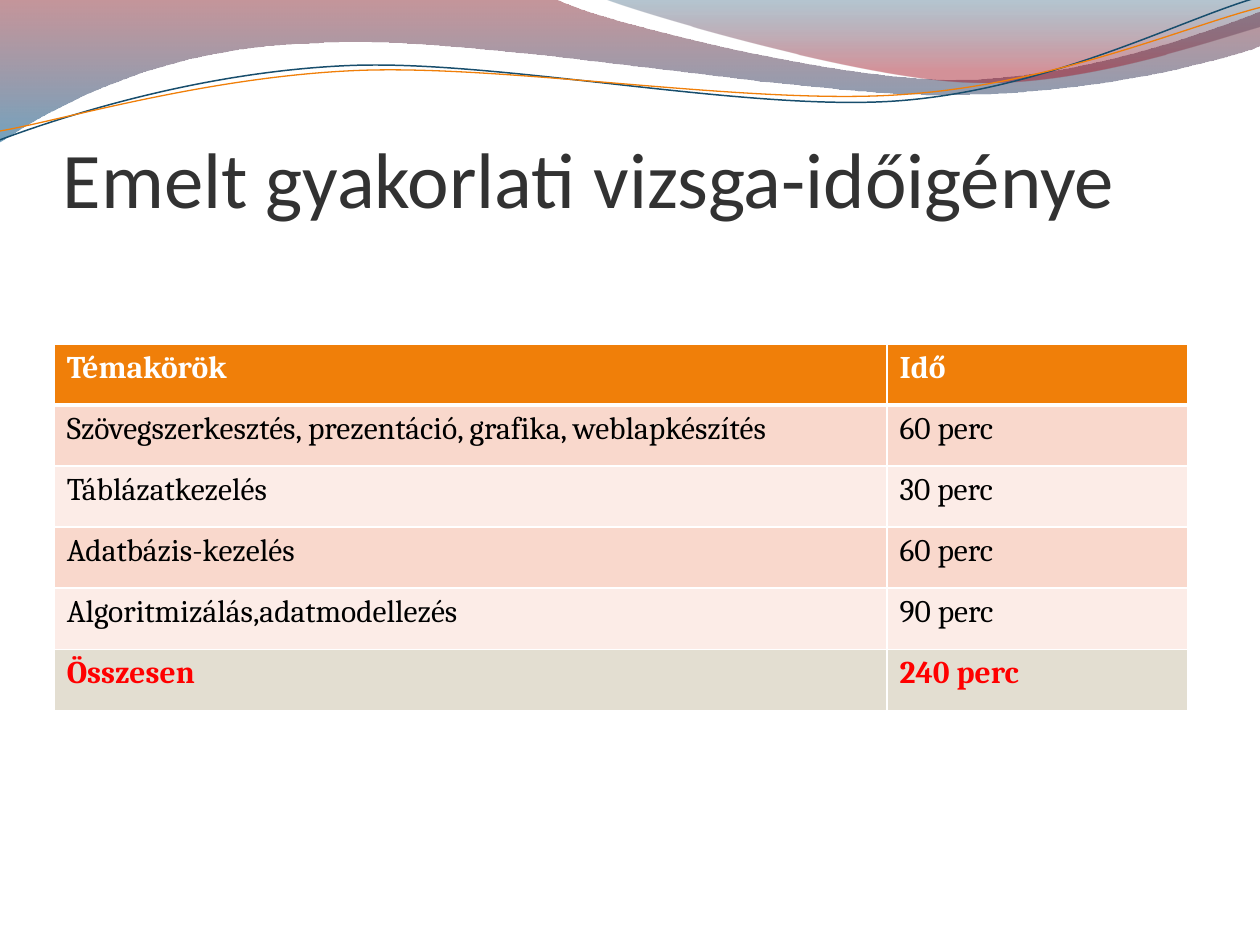
import math

import pptx
import pptx.dml.color
import pptx.enum.text
import pptx.oxml.ns
import pptx.util
from lxml import etree

Inches, Pt = pptx.util.Inches, pptx.util.Pt
RGBColor = pptx.dml.color.RGBColor
qn = pptx.oxml.ns.qn

WHITE = RGBColor(0xFF, 0xFF, 0xFF)
BLACK = RGBColor(0x00, 0x00, 0x00)
RED = RGBColor(0xFF, 0x00, 0x00)
CHARCOAL = RGBColor(0x32, 0x32, 0x32)
ORANGE = RGBColor(0xF0, 0x7F, 0x09)
NAVY = RGBColor(0x18, 0x4E, 0x6D)
WINE = RGBColor(0x7E, 0x16, 0x21)
BLUE = RGBColor(0x00, 0x56, 0x89)
DEEP_BLUE = RGBColor(0x09, 0x44, 0x67)
CRIMSON = RGBColor(0xA1, 0x0F, 0x1F)
PINK = RGBColor(0xF9, 0xD8, 0xCC)
PALE_PINK = RGBColor(0xFC, 0xEC, 0xE7)
BEIGE = RGBColor(0xE3, 0xDE, 0xD1)
TILT = 2.7


def add_curve(shapes, start, segments, close):
    """Draw segments of one end point (line) or three points (cubic Bezier)."""
    points = [(Inches(x), Inches(y)) for segment in segments for x, y in segment]
    builder = shapes.build_freeform(Inches(start[0]), Inches(start[1]))
    builder.add_line_segments(points, close=close)
    sp = builder.convert_to_shape()
    sp.shadow.inherit = False
    lines = iter(list(sp._element.spPr.iter(qn("a:lnTo"))))
    for segment in segments:
        first = next(lines)
        if len(segment) == 3:
            first.tag = qn("a:cubicBezTo")
            for _ in range(2):
                line = next(lines)
                first.append(line[0])
                line.getparent().remove(line)
    return sp


def rotate(point, center, degrees):
    angle = math.radians(degrees)
    dx, dy = point[0] - center[0], point[1] - center[1]
    return (center[0] + dx * math.cos(angle) - dy * math.sin(angle),
            center[1] + dx * math.sin(angle) + dy * math.cos(angle))


prs = pptx.Presentation()
prs.slide_width, prs.slide_height = Inches(10), Inches(7.5)
s = prs.slides.add_slide(prs.slide_layouts[6])

# Gradient bands: start, segments, (position, colour, opacity in percent)
bands = [
    ((0, 0), [[(4.4, -0.01)],
              [(4.76, 0.17), (6.64, 0.63), (7.58, 0.63)],
              [(8.53, 0.63), (9.58, 0.26), (10, 0.09)],
              [(10.01, 0.36)],
              [(9.83, 0.44), (8.7, 0.76), (7.46, 0.75)],
              [(6.22, 0.75), (3.82, 0.28), (2.57, 0.34)],
              [(1.29, 0.36), (0.46, 0.83), (-0.01, 1.13)],
              [(0, 0)]],
     [(0, WINE, 45), (1, BLUE, 55)]),
    ((4.79, -0.01), [[(5.09, 0.11), (6.82, 0.62), (7.69, 0.65)],
                     [(8.56, 0.69), (9.61, 0.32), (10, 0.21)],
                     [(10, 0)],
                     [(4.79, -0.01)]],
     [(0, DEEP_BLUE, 30), (0.8, CRIMSON, 45)]),
]
for start, segments, stops in bands:
    sp = add_curve(s.shapes, start, segments, True)
    sp.line.fill.background()
    sp.fill.gradient()
    sp.fill.gradient_angle = 270
    for stop, (position, color, _) in zip(sp.fill.gradient_stops, stops):
        stop.position = position
        stop.color.rgb = color
    for clr, (_, _, opacity) in zip(sp._element.spPr.iter(qn("a:srgbClr")), stops):
        etree.SubElement(clr, qn("a:alpha"), val=str(opacity * 1000))

# Wavy lines, laid out level around their centre and then tilted
waves = [
    ((0, 1.11), [[(0.48, 0.93), (1.58, 0.57), (2.77, 0.52)],
                 [(3.95, 0.47), (5.93, 0.89), (7.13, 0.8)],
                 [(8.33, 0.71), (9.38, 0.15), (9.98, -0.02)]], (4.99, 0.58), NAVY, 0.85),
    ((0, 1.04), [[(0.47, 0.96), (1.64, 0.61), (2.83, 0.56)],
                 [(4.03, 0.51), (5.97, 0.84), (7.17, 0.75)],
                 [(8.36, 0.67), (9.41, 0.21), (10, 0.06)]], (5, 0.59), ORANGE, 0.75),
]
group = s.shapes.add_group_shape()
for start, segments, center, color, width in waves:
    level = [[rotate(point, center, TILT) for point in segment] for segment in segments]
    sp = add_curve(group.shapes, rotate(start, center, TILT), level, False)
    sp.rotation = 360 - TILT
    sp.fill.background()
    sp.line.color.rgb = color
    sp.line.width = Pt(width)

# Title
tf = s.shapes.add_textbox(Inches(0.5), Inches(0.99), Inches(9), Inches(0.79)).text_frame
tf.word_wrap = True
tf.vertical_anchor = pptx.enum.text.MSO_ANCHOR.BOTTOM
tf.margin_left = tf.margin_right = tf.margin_bottom = 0
tf.margin_top = Inches(0.05)
tf.text = "Emelt gyakorlati vizsga-időigénye"
font = tf.paragraphs[0].runs[0].font
font.name, font.size, font.color.rgb = "Calibri", Pt(45), CHARCOAL

# Timetable: cell texts, fill, font colour, bold
rows = [
    (("Témakörök", "Idő"), ORANGE, WHITE, True),
    (("Szövegszerkesztés, prezentáció, grafika, weblapkészítés", "60 perc"), PINK, BLACK, False),
    (("Táblázatkezelés", "30 perc"), PALE_PINK, BLACK, False),
    (("Adatbázis-kezelés", "60 perc"), PINK, BLACK, False),
    (("Algoritmizálás,adatmodellezés", "90 perc"), PALE_PINK, BLACK, False),
    (("Összesen", "240 perc"), BEIGE, RED, True),
]
table = s.shapes.add_table(len(rows), 2, Inches(0.43), Inches(2.73), Inches(9), Inches(2.91)).table
table.columns[0].width, table.columns[1].width = Inches(6.61), Inches(2.39)
for i, (texts, fill, color, bold) in enumerate(rows):
    for j, text in enumerate(texts):
        cell = table.cell(i, j)
        tcPr = cell._tc.get_or_add_tcPr()
        for side in "LRTB":
            under_header = (i, side) in ((0, "B"), (1, "T"))
            ln = etree.SubElement(tcPr, qn("a:ln" + side), w=str(Pt(3 if under_header else 1)))
            line_fill = etree.SubElement(ln, qn("a:solidFill"))
            etree.SubElement(line_fill, qn("a:srgbClr"), val=str(WHITE))
        cell.fill.solid()
        cell.fill.fore_color.rgb = fill
        cell.text = text
        font = cell.text_frame.paragraphs[0].runs[0].font
        font.name, font.size, font.bold = "Cambria", Pt(18), bold
        font.color.rgb = color

prs.save("out.pptx")
